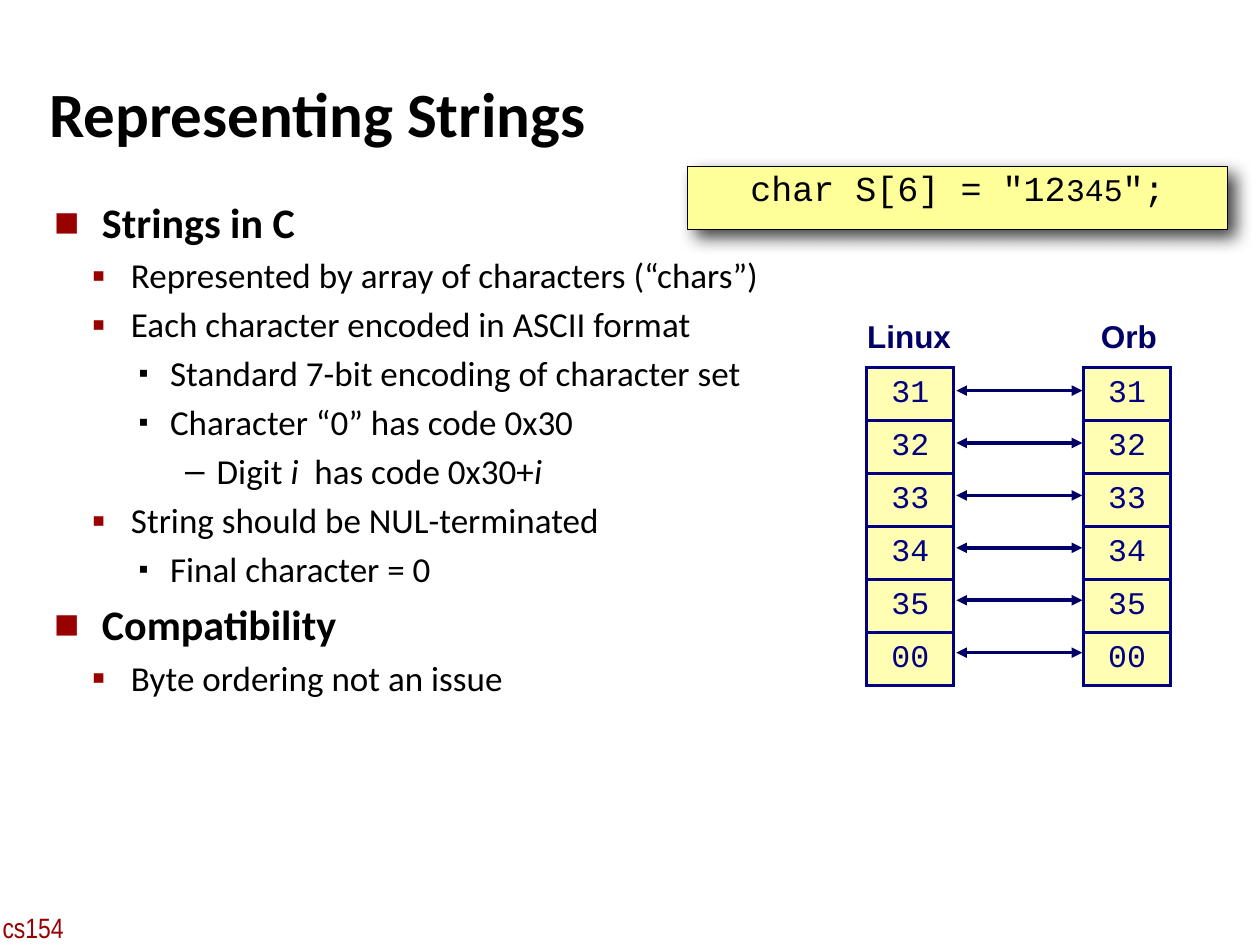
from dataclasses import dataclass
from typing import NamedTuple

from lxml.etree import SubElement
from pptx import Presentation
from pptx.dml.color import RGBColor
from pptx.enum.shapes import MSO_CONNECTOR as Connector, MSO_SHAPE as Shape
from pptx.enum.text import MSO_ANCHOR as Anchor, PP_ALIGN as Align
from pptx.oxml.ns import qn
from pptx.util import Inches, Pt

BLACK = RGBColor(0x00, 0x00, 0x00)
RED = RGBColor(0x99, 0x00, 0x00)
INK = RGBColor(0x00, 0x00, 0x66)
NAVY = RGBColor(0x00, 0x00, 0x80)
YELLOW = RGBColor(0xFF, 0xFF, 0x99)
CREAM = RGBColor(0xFF, 0xFE, 0xB2)
CELL = 0.1
BYTES = ["31", "32", "33", "34", "35", "00"]
BYTE_TOP, BYTE_ROWS, BYTE_COLUMNS = 29.2, 4.16, 6.9


class Box(NamedTuple):
    column: float
    row: float
    columns: float
    rows: float

    def place(self) -> list:
        return [grid(value) for value in self]


@dataclass(frozen=True)
class Style:
    font: str
    size: float
    color: RGBColor = BLACK
    bold: bool = False


@dataclass(frozen=True)
class Level:
    left: float
    hanging: float
    bullet: str
    bullet_size: int
    bullet_color: RGBColor
    space: float
    style: Style


@dataclass(frozen=True)
class Machine:
    name: str
    label: Box
    column: float


PLAIN = Style("Calibri", 20)
LEVELS = [
    Level(3.8, 3.8, "■", 100, RED, 5, Style("Calibri", 24, bold=True)),
    Level(6.1, 3.1, "▪", 110, RED, 4, PLAIN),
    Level(9.2, 2.5, "▪", 80, BLACK, 4, PLAIN),
    Level(12.9, 2.5, "–", 100, BLACK, 4, PLAIN),
]
OUTLINE = [
    (0, ["Strings in C"]),
    (1, ["Represented by array of characters (“chars”)"]),
    (1, ["Each character encoded in ASCII format"]),
    (2, ["Standard 7-bit encoding of character set"]),
    (2, ["Character “0” has code 0x30"]),
    (3, ["Digit ", "i", "  has code 0x30+", "i"]),
    (1, ["String should be NUL-terminated"]),
    (2, ["Final character = 0"]),
    (0, ["Compatibility"]),
    (1, ["Byte ordering not an issue"]),
]
MACHINES = [
    Machine("Linux", Box(68.2, 24.6, 7.9, 4.2), 68.8),
    Machine("Orb", Box(86.6, 24.6, 6, 4.2), 86),
]


def grid(cells: float) -> int:
    return Inches(cells * CELL)


def format_run(run, style: Style) -> None:
    font = run.font
    font.name, font.size, font.bold = style.font, Pt(style.size), style.bold
    font.color.rgb = style.color


def set_margins(frame, margin: float) -> None:
    frame.margin_left = frame.margin_right = grid(margin)
    frame.margin_top = frame.margin_bottom = grid(margin)


def add_label(slide, box: Box, text: str, style: Style, margin: float, align=Align.LEFT) -> None:
    frame = slide.shapes.add_textbox(*box.place()).text_frame
    set_margins(frame, margin)
    frame.word_wrap = False
    frame.text = text
    frame.paragraphs[0].alignment = align
    format_run(frame.paragraphs[0].runs[0], style)


def add_title(slide) -> None:
    title = slide.shapes.title
    title.left, title.top, title.width, title.height = Box(3.9, 4.8, 83, 8.3).place()
    frame = title.text_frame
    set_margins(frame, 0)
    frame.vertical_anchor = Anchor.MIDDLE
    frame.text = "Representing Strings"
    frame.paragraphs[0].alignment = Align.LEFT
    format_run(frame.paragraphs[0].runs[0], Style("Calibri", 36, bold=True))


def add_code(slide) -> None:
    shape = slide.shapes.add_shape(Shape.RECTANGLE, *Box(54.6, 13.2, 42.8, 5).place())
    shape.shadow.inherit = False
    shape.fill.solid()
    shape.fill.fore_color.rgb = YELLOW
    shape.line.color.rgb = BLACK
    shape.line.width = Pt(0.5)
    effects = shape._element.spPr.find(qn("a:effectLst"))
    shadow = SubElement(effects, qn("a:outerShdw"), blurRad=str(Pt(10)), dist=str(Pt(6)),
                        dir="2700000", algn="tl", rotWithShape="0")
    color = SubElement(shadow, qn("a:srgbClr"), val=str(BLACK))
    SubElement(color, qn("a:alpha"), val="75000")
    frame = shape.text_frame
    set_margins(frame, 0.3)
    frame.vertical_anchor = Anchor.TOP
    frame.word_wrap = True
    paragraph = frame.paragraphs[0]
    paragraph.alignment = Align.CENTER
    paragraph.line_spacing = 0.95
    for text, size in [('char S[6] = "12', 20), ("345", 18), ('";', 20)]:
        run = paragraph.add_run()
        run.text = text
        format_run(run, Style("Courier New", size))


def add_bullet(paragraph, level: Level) -> None:
    properties = paragraph._p.get_or_add_pPr()
    properties.set("marL", str(grid(level.left)))
    properties.set("indent", str(-grid(level.hanging)))
    color = SubElement(properties, qn("a:buClr"))
    SubElement(color, qn("a:srgbClr"), val=str(level.bullet_color))
    SubElement(properties, qn("a:buSzPct"), val=str(level.bullet_size * 1000))
    SubElement(properties, qn("a:buFont"), typeface="Arial")
    SubElement(properties, qn("a:buChar"), char=level.bullet)


def add_outline(slide) -> None:
    frame = slide.shapes.add_textbox(*Box(4.3, 15.6, 86.4, 54.4).place()).text_frame
    set_margins(frame, 0)
    frame.word_wrap = True
    for index, (depth, parts) in enumerate(OUTLINE):
        level = LEVELS[depth]
        paragraph = frame.add_paragraph() if index else frame.paragraphs[0]
        paragraph.level = depth
        add_bullet(paragraph, level)
        if index:
            paragraph.space_before = Pt(level.space)
        for part in parts:
            run = paragraph.add_run()
            run.text = part
            format_run(run, level.style)
            run.font.italic = part == "i"


def format_cell(cell, text: str) -> None:
    properties = cell._tc.get_or_add_tcPr()
    for side in ("a:lnL", "a:lnR", "a:lnT", "a:lnB"):
        border = SubElement(properties, qn(side), w=str(Pt(2)))
        SubElement(SubElement(border, qn("a:solidFill")), qn("a:srgbClr"), val=str(NAVY))
    cell.fill.solid()
    cell.fill.fore_color.rgb = CREAM
    set_margins(cell, 0.6)
    cell.vertical_anchor = Anchor.MIDDLE
    cell.text = text
    paragraph = cell.text_frame.paragraphs[0]
    paragraph.alignment = Align.CENTER
    format_run(paragraph.runs[0], Style("Courier New", 18, NAVY))


def add_machine(slide, machine: Machine) -> None:
    add_label(slide, machine.label, machine.name, Style("Arial", 18, INK, True), 0.6, Align.CENTER)
    box = Box(machine.column, BYTE_TOP, BYTE_COLUMNS, BYTE_ROWS * len(BYTES))
    table = slide.shapes.add_table(len(BYTES), 1, *box.place()).table
    table.first_row = table.horz_banding = False
    for index, text in enumerate(BYTES):
        table.rows[index].height = grid(BYTE_ROWS)
        format_cell(table.cell(index, 0), text)


def add_arrow(slide, row: float) -> None:
    arrow = slide.shapes.add_connector(
        Connector.STRAIGHT, grid(75.9), grid(row), grid(85.9), grid(row))
    arrow.line.color.rgb = INK
    arrow.line.width = Pt(2)
    line = arrow.line._get_or_add_ln()
    for end in ("a:headEnd", "a:tailEnd"):
        SubElement(line, qn(end), type="triangle")
    SubElement(arrow._element.spPr, qn("a:effectLst"))


def main() -> None:
    presentation = Presentation()
    presentation.slide_width, presentation.slide_height = Inches(10), Inches(7.5)
    slide = presentation.slides.add_slide(presentation.slide_layouts[5])
    add_label(slide, Box(-0.3, 71.8, 6.1, 3.7), "cs154", Style("Arial Narrow", 16, RED), 0.5)
    add_code(slide)
    add_title(slide)
    add_outline(slide)
    for index in range(len(BYTES)):
        add_arrow(slide, BYTE_TOP + 1.8 + index * BYTE_ROWS)
    for machine in MACHINES:
        add_machine(slide, machine)
    presentation.save("out.pptx")


if __name__ == "__main__":
    main()
